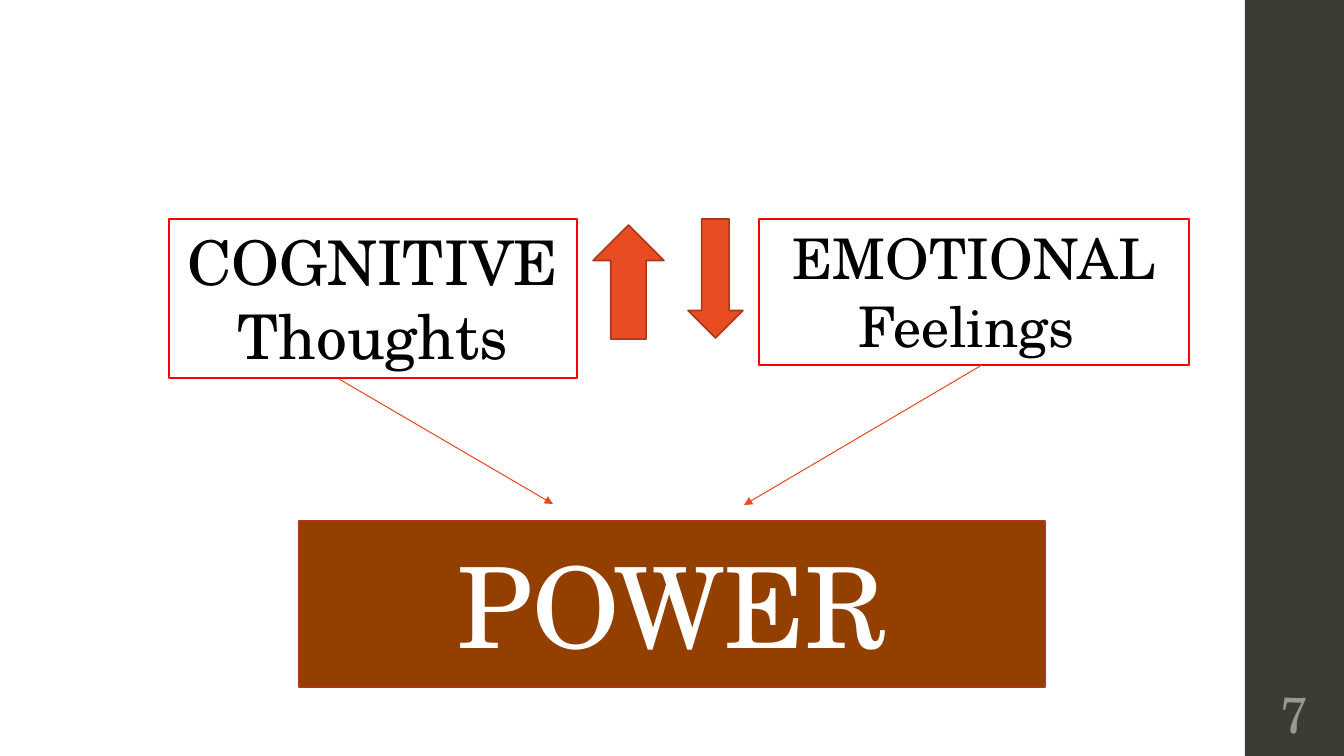
import pptx
import pptx.dml.color
import pptx.enum.shapes
import pptx.enum.text
import pptx.oxml.ns
import pptx.util
from lxml import etree

PX = 914400 / 100.8
FONT = "TeX Gyre Schola"
COLORS = {
    "sidebar": "3C3C34", "number": "9A9A8C", "frame": "FF0000",
    "black": "000000", "white": "FFFFFF", "orange": "E84C22",
    "outline": "AC3819", "brown": "933F00",
}
SHAPES = pptx.enum.shapes.MSO_SHAPE
ANCHORS = pptx.enum.text.MSO_ANCHOR


def color(name):
    return pptx.dml.color.RGBColor.from_string(COLORS[name])


def add_block(kind, box, fill=None, line=None, width=1.1, lines=(), size=18,
              text_color="black", anchor=ANCHORS.MIDDLE):
    shape = slide.shapes.add_shape(kind, *[round(value * PX) for value in box])
    shape.shadow.inherit = False
    if fill:
        shape.fill.solid()
        shape.fill.fore_color.rgb = color(fill)
    else:
        shape.fill.background()
    if line:
        shape.line.color.rgb = color(line)
        shape.line.width = pptx.util.Pt(width)
    else:
        shape.line.fill.background()
    frame = shape.text_frame
    frame.word_wrap = True
    frame.vertical_anchor = anchor
    for index, text in enumerate(lines):
        paragraph = frame.add_paragraph() if index else frame.paragraphs[0]
        paragraph.text = text
        paragraph.alignment = pptx.enum.text.PP_ALIGN.CENTER
        paragraph.font.name = FONT
        paragraph.font.size = pptx.util.Pt(size)
        paragraph.font.color.rgb = color(text_color)
    return shape


presentation = pptx.Presentation()
presentation.slide_width = round(1344 * PX)
presentation.slide_height = round(756 * PX)
slide = presentation.slides.add_slide(presentation.slide_layouts[6])

# Sidebar with slide number
add_block(SHAPES.RECTANGLE, (1245, 0, 99, 756), fill="sidebar")
number = add_block(SHAPES.RECTANGLE, (1245, 680, 99, 66), lines=["7"], size=36,
                   text_color="number")
number.text_frame.margin_left = number.text_frame.margin_right = pptx.util.Inches(0.05)

# Framed boxes
for box, lines, size in [
    ((169, 219, 408, 159), ["COGNITIVE", "Thoughts"], 44),
    ((759, 219, 430, 146), ["EMOTIONAL", "Feelings "], 40),
]:
    add_block(SHAPES.RECTANGLE, box, line="frame", width=2, lines=lines,
              size=size, anchor=ANCHORS.TOP)

# Thin arrows towards the power box
for ends in [(339, 379, 553, 504), (982, 365, 744, 505)]:
    connector = slide.shapes.add_connector(
        pptx.enum.shapes.MSO_CONNECTOR.STRAIGHT,
        *[round(value * PX) for value in ends])
    connector.line.color.rgb = color("orange")
    connector.line.width = pptx.util.Pt(0.75)
    etree.SubElement(connector.line._get_or_add_ln(),
                     pptx.oxml.ns.qn("a:tailEnd"), type="triangle")
    etree.SubElement(connector._element.spPr, pptx.oxml.ns.qn("a:effectLst"))

# Power box
add_block(SHAPES.RECTANGLE, (299, 521, 746, 166), fill="brown", line="outline",
          lines=["POWER"], size=80, text_color="white")

# Block arrows between the framed boxes
for kind, box in [
    (SHAPES.UP_ARROW, (593, 225, 71, 114)),
    (SHAPES.DOWN_ARROW, (688, 219, 55, 119)),
]:
    add_block(kind, box, fill="orange", line="outline")

presentation.save("out.pptx")
